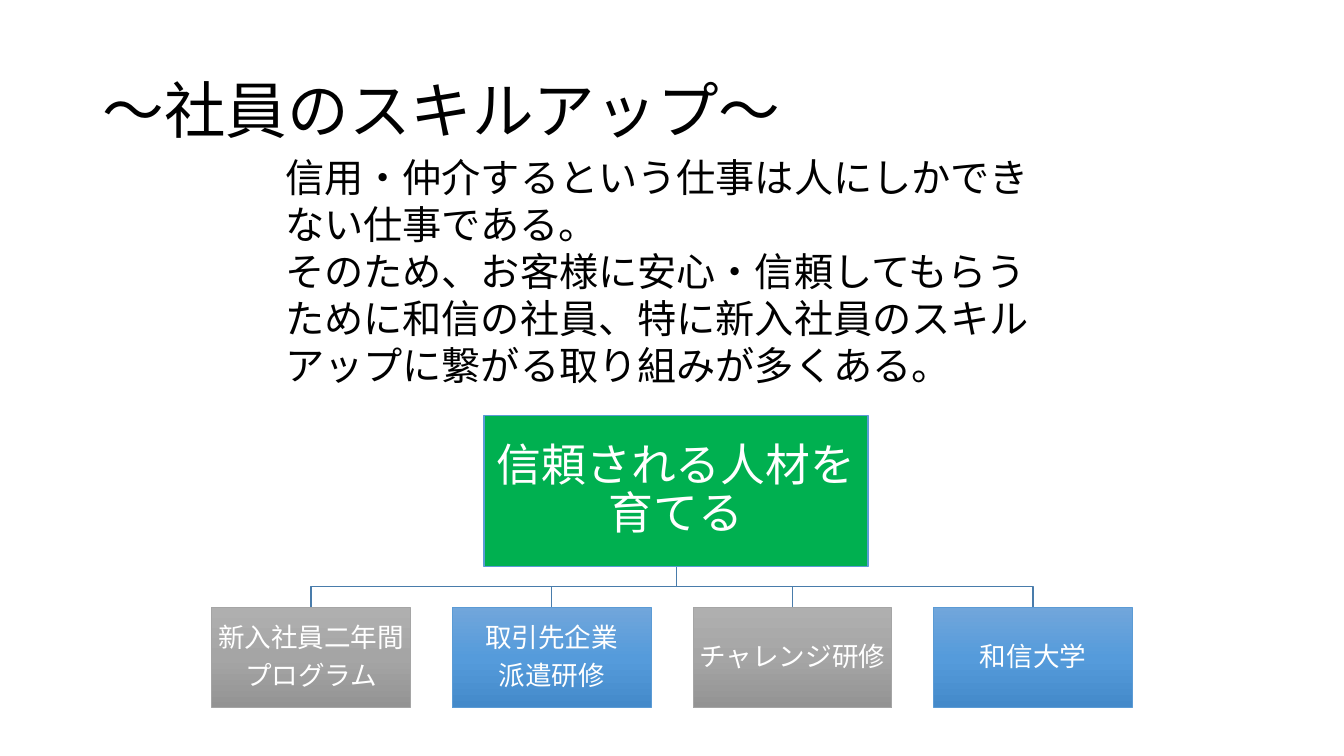
from copy import deepcopy
from dataclasses import dataclass

from pptx import Presentation
from pptx.dml.color import RGBColor
from pptx.enum.shapes import MSO_SHAPE as Shape
from pptx.enum.text import MSO_ANCHOR as Anchor, PP_ALIGN as Align
from pptx.oxml.ns import qn
from pptx.util import Inches, Pt

GREY = ("AFAFAF", "A5A5A5", "939393")
BLUE = ("71A6DB", "559BDB", "448ACA")
BLUE_LINE = "5B9BD5"
TREE_LINE = "497CAB"
GREEN = "00B050"

GOAL_LEFT, GOAL_TOP, GOAL_W, GOAL_H = 4.8, 4.12, 3.81, 1.5
GOAL_X, GOAL_BOTTOM = 6.71, GOAL_TOP + GOAL_H
CARD_LEFT, CARD_TOP, CARD_W, CARD_H = 2.1, 6.03, 1.97, 0.99
CARD_STEP = 2.387
BRANCH_Y = 5.82


@dataclass
class Program:
    text: str
    shades: tuple[str, str, str]
    line: str


PROGRAMS = [
    Program("新入社員二年間\nプログラム", GREY, "A5A5A5"),
    Program("取引先企業\n派遣研修", BLUE, BLUE_LINE),
    Program("チャレンジ研修", GREY, "A5A5A5"),
    Program("和信大学", BLUE, BLUE_LINE),
]


def rgb(value: str) -> RGBColor:
    return RGBColor.from_string(value)


def write(sp, text: str, size: float, color: str) -> None:
    tf = sp.text_frame
    tf.word_wrap = True
    tf.text = text
    for p in tf.paragraphs:
        for r in p.runs:
            r.font.name = "Calibri"
            r.font.size = Pt(size)
            r.font.color.rgb = rgb(color)


def add_text(s, left: float, top: float, width: float, height: float,
             text: str, size: float):
    sp = s.shapes.add_textbox(Inches(left), Inches(top), Inches(width), Inches(height))
    write(sp, text, size, "000000")
    return sp


def add_box(s, left: float, top: float, width: float, height: float, text: str,
            size: float, line: str, line_width: float, inset: float):
    sp = s.shapes.add_shape(Shape.RECTANGLE, Inches(left), Inches(top),
                            Inches(width), Inches(height))
    sp.shadow.inherit = False
    sp.line.color.rgb = rgb(line)
    sp.line.width = Pt(line_width)
    write(sp, text, size, "FFFFFF")
    tf = sp.text_frame
    tf.vertical_anchor = Anchor.MIDDLE
    tf.margin_left = tf.margin_right = Inches(inset)
    tf.margin_top = tf.margin_bottom = Inches(inset)
    for p in tf.paragraphs:
        p.alignment = Align.CENTER
        p.line_spacing = 0.9
        p.space_after = Pt(size * 0.35)
    return sp


def shade(sp, colors: tuple[str, str, str]) -> None:
    sp.fill.gradient()
    sp.fill.gradient_angle = 270
    stops = sp.element.spPr.find(qn("a:gradFill")).find(qn("a:gsLst"))
    stops.insert(1, deepcopy(stops[0]))
    for stop, color, position in zip(sp.fill.gradient_stops, colors, (0, 0.5, 1)):
        stop.color.rgb = rgb(color)
        stop.position = position


def add_branch(s, x: float) -> None:
    fb = s.shapes.build_freeform(Inches(GOAL_X), Inches(GOAL_BOTTOM))
    corners = [(GOAL_X, BRANCH_Y), (x, BRANCH_Y), (x, CARD_TOP)]
    fb.add_line_segments([(Inches(px), Inches(py)) for px, py in corners], close=False)
    sp = fb.convert_to_shape()
    sp.shadow.inherit = False
    sp.fill.background()
    sp.line.color.rgb = rgb(TREE_LINE)
    sp.line.width = Pt(1)


def main() -> None:
    prs = Presentation()
    prs.slide_width, prs.slide_height = Inches(13.33), Inches(7.5)
    s = prs.slides.add_slide(prs.slide_layouts[6])

    title = add_text(s, 0.92, 0.4, 11.5, 1.45, "～社員のスキルアップ～", 44)
    title.text_frame.vertical_anchor = Anchor.MIDDLE
    title.text_frame.paragraphs[0].line_spacing = 0.9

    lefts = [CARD_LEFT + i * CARD_STEP for i in range(len(PROGRAMS))]
    for left in lefts:
        add_branch(s, left + CARD_W / 2)

    goal = add_box(s, GOAL_LEFT, GOAL_TOP, GOAL_W, GOAL_H,
                   "信頼される人材を育てる", 32, BLUE_LINE, 1, 0.02)
    goal.fill.solid()
    goal.fill.fore_color.rgb = rgb(GREEN)

    for left, program in zip(lefts, PROGRAMS):
        card = add_box(s, left, CARD_TOP, CARD_W, CARD_H,
                       program.text, 19, program.line, 0.5, 0.01)
        shade(card, program.shades)

    add_text(s, 2.73, 1.47, 7.87, 2.46,
             "信用・仲介するという仕事は人にしかできない仕事である。\n"
             "そのため、お客様に安心・信頼してもらうために和信の社員、"
             "特に新入社員のスキルアップに繋がる取り組みが多くある。", 28)

    prs.save("out.pptx")


if __name__ == "__main__":
    main()
